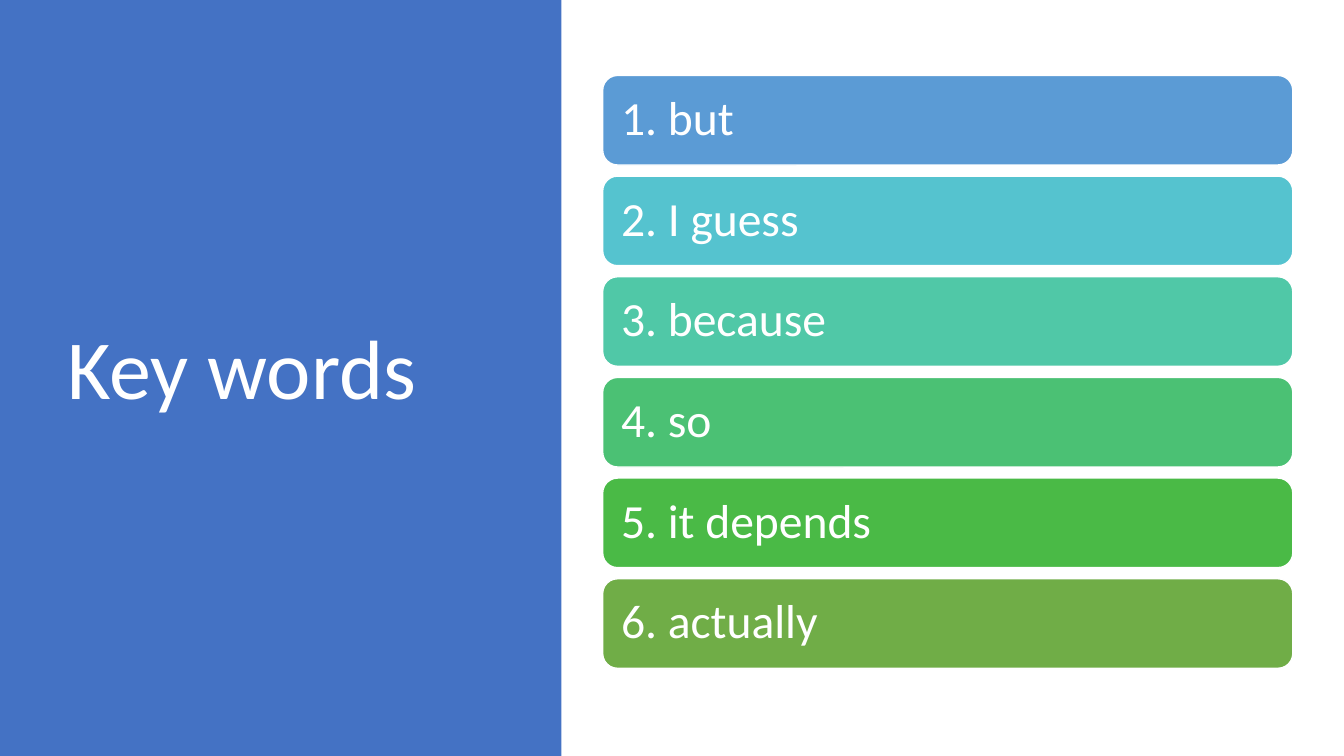
from dataclasses import dataclass

from pptx import Presentation
from pptx.dml.color import RGBColor
from pptx.enum.shapes import MSO_SHAPE
from pptx.enum.text import MSO_ANCHOR, PP_ALIGN
from pptx.util import Pt

RECTANGLE = MSO_SHAPE.RECTANGLE
ROUNDED = MSO_SHAPE.ROUNDED_RECTANGLE
MIDDLE = MSO_ANCHOR.MIDDLE
LEFT = PP_ALIGN.LEFT

WHITE = "FFFFFF"
PANEL_BLUE = "4472C4"
BAR_LEFT, BAR_TOP, BAR_WIDTH, BAR_HEIGHT = 430.5, 53.9, 493, 64
BAR_PITCH = 71.9


@dataclass
class KeyWord:
    text: str
    fill: str


KEY_WORDS = [
    KeyWord("but", "5B9BD5"),
    KeyWord("I guess", "55C3CF"),
    KeyWord("because", "50C8A7"),
    KeyWord("so", "4BC174"),
    KeyWord("it depends", "4ABA46"),
    KeyWord("actually", "70AD47"),
]


def colour(value: str) -> RGBColor:
    return RGBColor.from_string(value)


def apply_format(target, values: dict) -> None:
    for name, value in values.items():
        setattr(target, name, value)


def write_text(box, text: str, size: float, inset: float) -> None:
    frame = box.text_frame
    apply_format(frame, {
        "word_wrap": True,
        "vertical_anchor": MIDDLE,
        "margin_left": Pt(inset),
        "margin_right": Pt(inset),
    })
    para = frame.paragraphs[0]
    apply_format(para, {"alignment": LEFT, "line_spacing": 0.9})
    span = para.add_run()
    span.text = text
    apply_format(span.font, {"name": "Calibri", "size": Pt(size)})
    span.font.color.rgb = colour(WHITE)


def add_block(page, kind, left: float, top: float, width: float, height: float, fill: str):
    block = page.shapes.add_shape(kind, Pt(left), Pt(top), Pt(width), Pt(height))
    block.shadow.inherit = False
    block.fill.solid()
    block.fill.fore_color.rgb = colour(fill)
    block.line.fill.background()
    return block


def add_bar(page, number: int, word: KeyWord) -> None:
    top = BAR_TOP + (number - 1) * BAR_PITCH
    bar = add_block(page, ROUNDED, BAR_LEFT, top, BAR_WIDTH, BAR_HEIGHT, word.fill)
    bar.line.color.rgb = colour(WHITE)
    bar.line.width = Pt(1)
    write_text(bar, f"{number}. {word.text}", 34, 10)


def main() -> None:
    deck = Presentation()
    apply_format(deck, {"slide_width": Pt(960), "slide_height": Pt(540)})
    page = deck.slides.add_slide(deck.slide_layouts[6])
    add_block(page, RECTANGLE, 0, 0, 401, 540, PANEL_BLUE)
    title = page.shapes.add_textbox(Pt(41), Pt(49), Pt(299.5), Pt(433.5))
    write_text(title, "Key words", 60, 7.2)
    for number, word in enumerate(KEY_WORDS, start=1):
        add_bar(page, number, word)
    deck.save("out.pptx")


if __name__ == "__main__":
    main()
